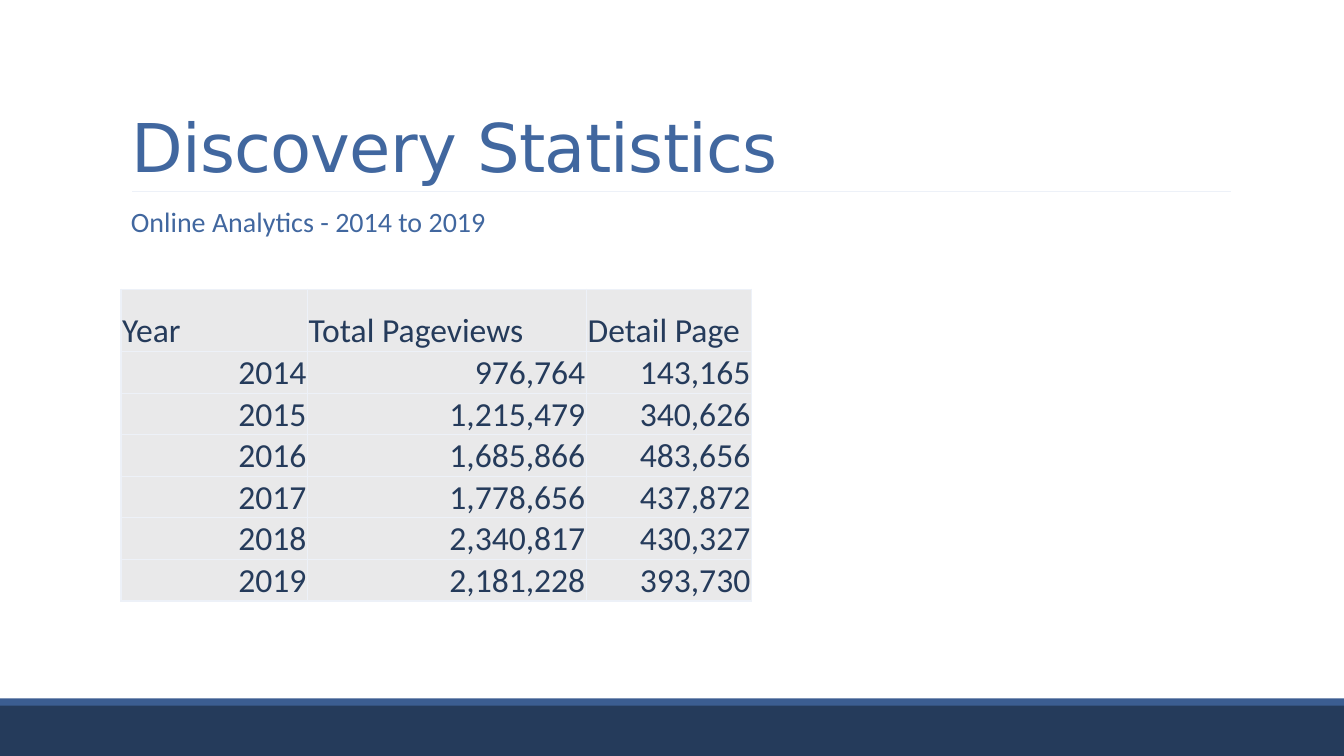
from dataclasses import dataclass
from pptx import Presentation
from pptx.dml.color import RGBColor
from pptx.enum.shapes import MSO_CONNECTOR, MSO_SHAPE
from pptx.enum.text import MSO_ANCHOR, MSO_AUTO_SIZE, PP_ALIGN
from pptx.oxml import parse_xml
from pptx.oxml.ns import nsdecls
from pptx.util import Cm, Pt

# Content
TITLE = "Discovery Statistics"
NOTE = "Online Analytics - 2014 to 2019"
ROWS = [
    ("Year", "Total Pageviews", "Detail Page"),
    ("2014", "976,764", "143,165"),
    ("2015", "1,215,479", "340,626"),
    ("2016", "1,685,866", "483,656"),
    ("2017", "1,778,656", "437,872"),
    ("2018", "2,340,817", "430,327"),
    ("2019", "2,181,228", "393,730"),
]
WIDTHS = [4.7, 7.03, 4.16]
HEAD, ROW = 1.57, 0.87
LEFT, WIDE = 3.05, 27.94
PAGE_W, PAGE_H = 33.87, 19.05


@dataclass(frozen=True)
class Theme:
    navy: str = "253B5B"
    blue: str = "3B5D91"
    text: str = "41679F"
    pale: str = "EDF1F8"
    gray: str = "E9E9EA"
    face: str = "Calibri"
    head: str = "DejaVu Sans"
    big: int = 48
    mid: int = 24
    small: int = 20


T = Theme()


def color(code):
    return RGBColor.from_string(code)


def style(para, face, size, code):
    font = para.runs[0].font
    font.name, font.size = face, Pt(size)
    font.color.rgb = color(code)


def band(slide, top, high, code):
    bar = slide.shapes.add_shape(MSO_SHAPE.RECTANGLE, 0, Cm(top), Cm(PAGE_W), Cm(high))
    bar.shadow.inherit = False
    bar.fill.solid()
    bar.fill.fore_color.rgb = color(code)
    bar.line.fill.background()
    return bar


def border(cell):
    props = cell._tc.get_or_add_tcPr()
    for i, side in enumerate("LRTB"):
        props.insert(i, parse_xml(
            f'<a:ln{side} {nsdecls("a")} w="12700"><a:solidFill>'
            f'<a:srgbClr val="{T.pale}"/></a:solidFill></a:ln{side}>'))


def fill_cell(cell, text, align):
    cell.margin_left = cell.margin_right = cell.margin_top = Cm(0.03)
    cell.margin_bottom = 0
    cell.vertical_anchor = MSO_ANCHOR.BOTTOM
    cell.fill.solid()
    cell.fill.fore_color.rgb = color(T.gray)
    border(cell)
    cell.text_frame.text = text
    para = cell.text_frame.paragraphs[0]
    para.alignment = align
    style(para, T.face, T.mid, T.navy)


def main():
    deck = Presentation()
    deck.slide_width, deck.slide_height = Cm(PAGE_W), Cm(PAGE_H)
    slide = deck.slides.add_slide(deck.slide_layouts[5])

    # Footer bands
    base = band(slide, 17.78, 1.27, T.navy)
    base.line.color.rgb = color(T.navy)
    base.line.width = Pt(1.25)
    band(slide, 17.6, 0.18, T.blue)

    # Rule below the title
    rule = slide.shapes.add_connector(
        MSO_CONNECTOR.STRAIGHT, Cm(3.33), Cm(4.83), Cm(31.01), Cm(4.83))
    rule.line.color.rgb = color(T.pale)
    rule.line.width = Pt(0.5)
    rule._element.spPr.append(parse_xml(f'<a:effectLst {nsdecls("a")}/>'))

    # Title
    title = slide.shapes.title
    title.left, title.top = Cm(LEFT), Cm(0.79)
    title.width, title.height = Cm(WIDE), Cm(4.04)
    frame = title.text_frame
    frame.text = TITLE
    frame.auto_size = MSO_AUTO_SIZE.NONE
    frame.vertical_anchor = MSO_ANCHOR.BOTTOM
    para = frame.paragraphs[0]
    para.alignment = PP_ALIGN.LEFT
    para.line_spacing = 0.85
    style(para, T.head, T.big, T.text)
    para.runs[0].font._element.set("spc", "-50")

    # Subtitle
    box = slide.shapes.add_textbox(Cm(LEFT), Cm(5.13), Cm(WIDE), Cm(1.52))
    frame = box.text_frame
    frame.word_wrap = True
    frame.margin_left, frame.margin_right = Cm(0.25), 0
    frame.text = NOTE
    para = frame.paragraphs[0]
    para.line_spacing = 0.9
    style(para, T.face, T.small, T.text)

    # Table of page views
    high = HEAD + ROW * (len(ROWS) - 1)
    table = slide.shapes.add_table(
        len(ROWS), len(WIDTHS), Cm(LEFT), Cm(7.29), Cm(sum(WIDTHS)), Cm(high)).table
    table.horz_banding = False
    table.first_row = False
    for col, width in zip(table.columns, WIDTHS):
        col.width = Cm(width)
    for r, row in enumerate(ROWS):
        table.rows[r].height = Cm(ROW if r else HEAD)
        for c, text in enumerate(row):
            fill_cell(table.cell(r, c), text, PP_ALIGN.RIGHT if r else PP_ALIGN.LEFT)

    deck.save("out.pptx")


if __name__ == "__main__":
    main()
